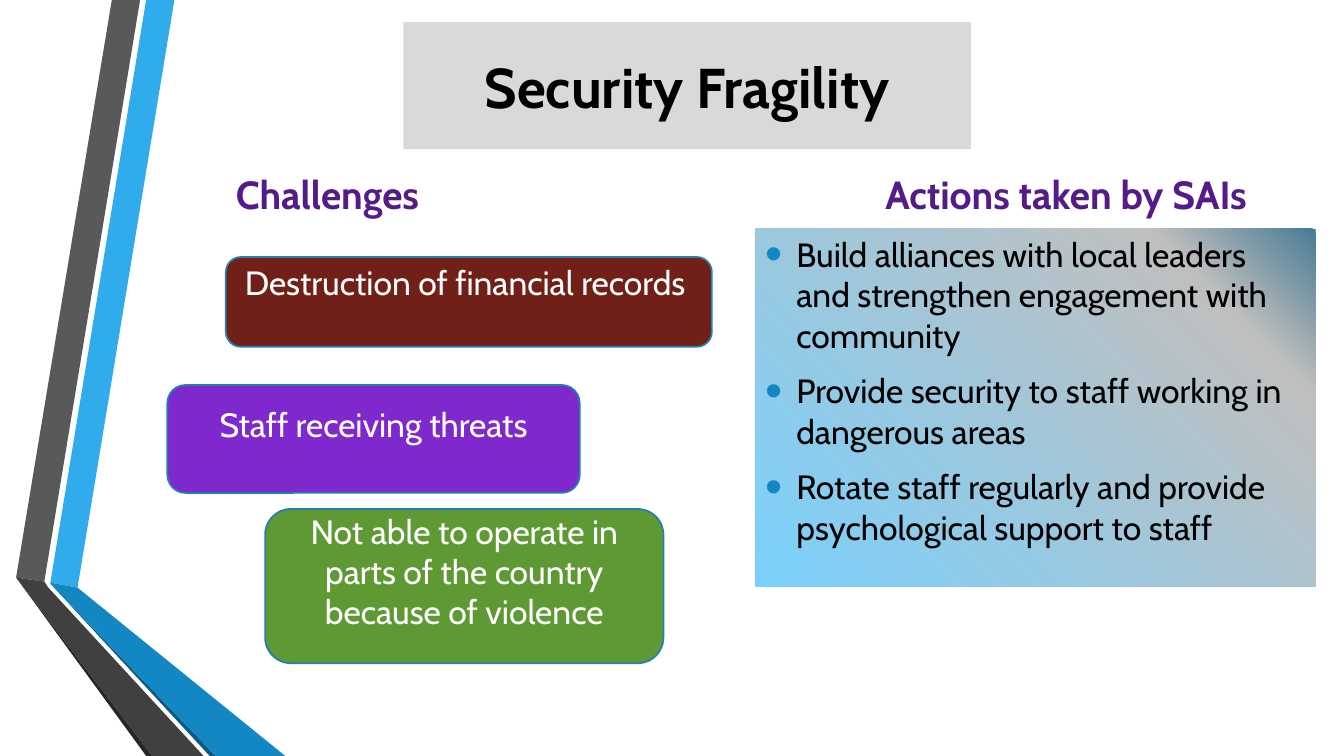
import copy

import pptx
import pptx.dml.color
import pptx.enum.shapes
import pptx.enum.text
import pptx.oxml
import pptx.oxml.ns
import pptx.util

Inches = pptx.util.Inches
Pt = pptx.util.Pt
RGBColor = pptx.dml.color.RGBColor
Shape = pptx.enum.shapes.MSO_SHAPE
Align = pptx.enum.text.PP_ALIGN
Anchor = pptx.enum.text.MSO_ANCHOR

FONT = "Cabin"
BLACK = RGBColor(0x00, 0x00, 0x00)
WHITE = RGBColor(0xFF, 0xFF, 0xFF)
SILVER = RGBColor(0xD9, 0xD9, 0xD9)
INDIGO = RGBColor(0x54, 0x1B, 0x89)
EDGE = RGBColor(0x24, 0x7F, 0xAF)
GREEN = RGBColor(0x5F, 0x99, 0x34)
PURPLE = RGBColor(0x7E, 0x28, 0xCD)
MAROON = RGBColor(0x71, 0x20, 0x18)
SKY = RGBColor(0x30, 0xAC, 0xEC)
BLUE = RGBColor(0x12, 0x87, 0xC3)
NAVY = RGBColor(0x0C, 0x5A, 0x82)
GREY = RGBColor(0x59, 0x59, 0x59)
DARK = RGBColor(0x40, 0x40, 0x40)
COAL = RGBColor(0x26, 0x26, 0x26)

PANEL_STOPS = [
    (0, RGBColor(0x48, 0x7B, 0x95)),
    (0.18, RGBColor(0xBF, 0xBF, 0xBF)),
    (1, RGBColor(0x7A, 0xD0, 0xFC)),
]

RIBBONS = [
    (SKY, [(0.5, 5.78), (0.77, 5.83), (1.73, 0), (1.45, 0)]),
    (GREY, [(1.39, 0), (1.11, 0), (0.16, 5.73), (0.44, 5.77)]),
    (COAL, [(0.16, 5.73), (1.45, 7.5), (1.51, 7.5)]),
    (NAVY, [(0.5, 5.79), (2.08, 7.5), (2.14, 7.5)]),
    (BLUE, [(0.5, 5.79), (2.14, 7.5), (2.83, 7.5), (0.77, 5.83), (0.5, 5.78)]),
    (DARK, [(2.02, 7.5), (0.48, 5.83), (0.44, 5.77), (0.16, 5.73), (1.51, 7.5)]),
]

# Box, fill, room kept free below the text, wording
CHALLENGES = [
    ((2.63, 5.05, 3.95, 1.53), GREEN, 0.35,
     "Not able to operate in parts of the country because of violence"),
    ((1.66, 3.82, 4.09, 1.07), PURPLE, 0.35, "Staff receiving threats"),
    ((2.24, 2.55, 4.82, 0.89), MAROON, 0.45, "Destruction of financial records "),
]

ACTIONS = [
    "Build alliances with local leaders and strengthen engagement with community",
    "Provide security to staff working in dangerous areas",
    "Rotate staff regularly and provide psychological support to staff",
]


def add_ribbon(slide, color, points):
    start, *rest = [(Inches(x), Inches(y)) for x, y in points]
    pen = slide.shapes.build_freeform(*start)
    pen.add_line_segments(rest, close=True)
    ribbon = pen.convert_to_shape()
    ribbon.shadow.inherit = False
    ribbon.fill.solid()
    ribbon.fill.fore_color.rgb = color
    ribbon.line.fill.background()


def add_box(slide, kind, box, color=None):
    shape = slide.shapes.add_shape(kind, *map(Inches, box))
    shape.shadow.inherit = False
    shape.line.fill.background()
    if color is not None:
        shape.fill.solid()
        shape.fill.fore_color.rgb = color
    return shape


def set_text(shape, text, size, color, align, anchor, bold=False):
    frame = shape.text_frame
    frame.word_wrap = True
    frame.vertical_anchor = anchor
    frame.text = text
    for para in frame.paragraphs:
        para.alignment = align
        for run in para.runs:
            run.font.name = FONT
            run.font.size = Pt(size)
            run.font.bold = bold
            run.font.color.rgb = color


def add_heading(slide, box, text, align):
    label = slide.shapes.add_textbox(*map(Inches, box))
    set_text(label, text, 28, INDIGO, align, Anchor.BOTTOM, bold=True)


def add_challenge(slide, box, color, room, text):
    card = add_box(slide, Shape.ROUNDED_RECTANGLE, box, color)
    card.line.color.rgb = EDGE
    card.line.width = Pt(1.25)
    set_text(card, text, 24, WHITE, Align.CENTER, Anchor.MIDDLE)
    card.text_frame.margin_bottom = Inches(room)


def fill_stops(shape, stops, angle):
    """Fill with a linear gradient; angle runs counter-clockwise."""
    fill = shape.fill
    fill.gradient()
    fill.gradient_angle = angle
    nodes = shape.element.spPr.find(".//" + pptx.oxml.ns.qn("a:gsLst"))
    while len(nodes) < len(stops):
        nodes.append(copy.deepcopy(nodes[0]))
    for stop, (place, color) in zip(fill.gradient_stops, stops):
        stop.position = place
        stop.color.rgb = color


def add_bullet(para):
    props = para._p.get_or_add_pPr()
    props.set("marL", str(Inches(0.31)))
    props.set("indent", str(Inches(-0.31)))
    space = pptx.oxml.ns.nsdecls("a")
    for part in (
        f'<a:buClr {space}><a:srgbClr val="{BLUE}"/></a:buClr>',
        f'<a:buSzPct {space} val="145000"/>',
        f'<a:buFont {space} typeface="Arial"/>',
        f'<a:buChar {space} char="•"/>',
    ):
        props.append(pptx.oxml.parse_xml(part))


def add_panel(slide, box, items):
    panel = add_box(slide, Shape.RECTANGLE, box)
    fill_stops(panel, PANEL_STOPS, 225)
    set_text(panel, "\n".join(items), 24, BLACK, Align.LEFT, Anchor.TOP)
    for para in panel.text_frame.paragraphs:
        para.space_after = Pt(11)
        add_bullet(para)


def main():
    deck = pptx.Presentation()
    deck.slide_width = Inches(13.33)
    deck.slide_height = Inches(7.5)
    slide = deck.slides.add_slide(deck.slide_layouts[6])

    for color, points in RIBBONS:
        add_ribbon(slide, color, points)

    title = add_box(slide, Shape.RECTANGLE, (4, 0.22, 5.63, 1.26), SILVER)
    set_text(title, "Security Fragility", 40, BLACK, Align.CENTER,
             Anchor.MIDDLE, bold=True)

    add_heading(slide, (2.24, 1.58, 4.74, 0.63), "Challenges", Align.LEFT)
    add_heading(slide, (7.49, 1.58, 5.06, 0.63), "Actions taken by SAIs ",
                Align.RIGHT)
    add_panel(slide, (7.49, 2.27, 5.56, 3.55), ACTIONS)

    for challenge in CHALLENGES:
        add_challenge(slide, *challenge)

    deck.save("out.pptx")


if __name__ == "__main__":
    main()
